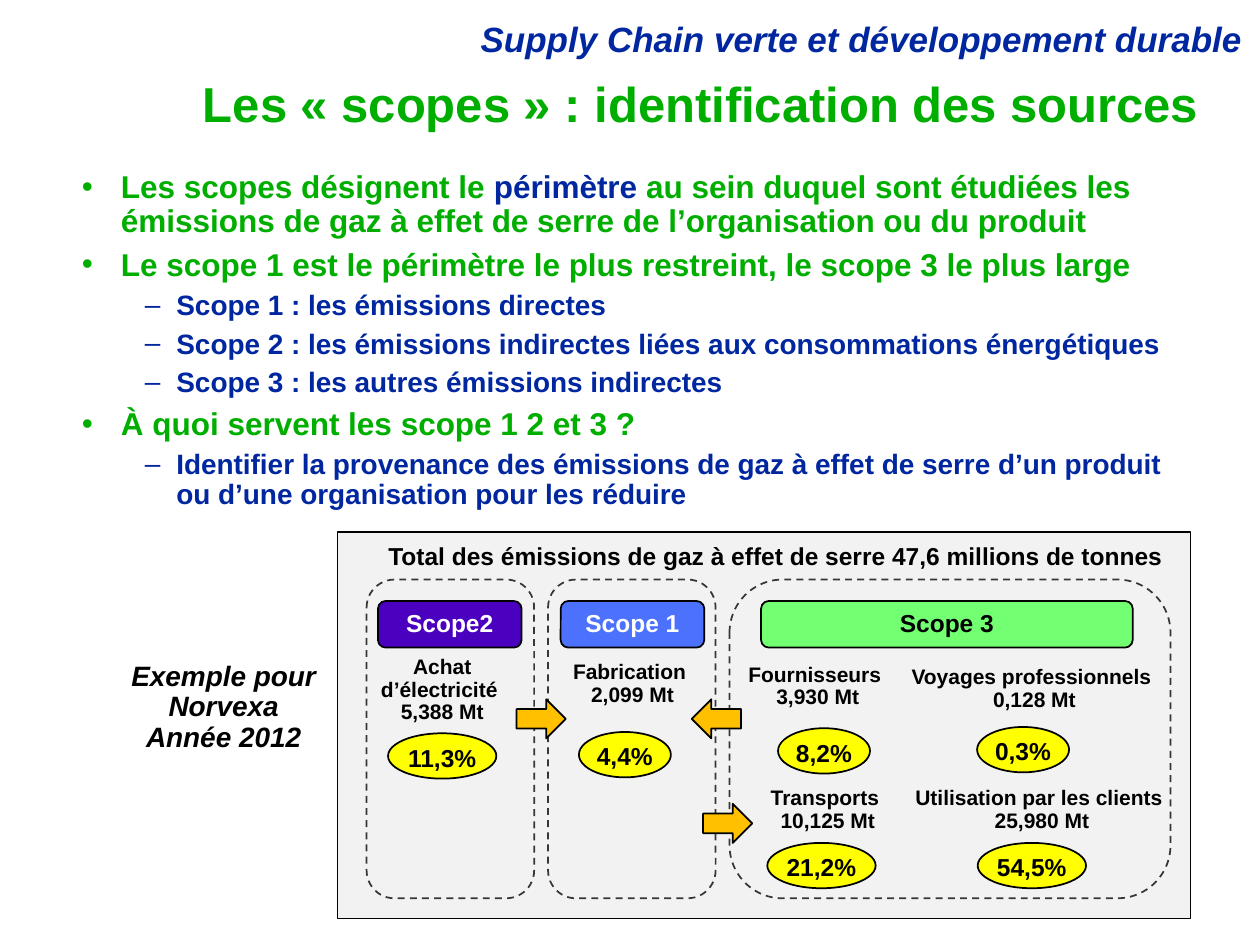
import pptx
import pptx.util
import pptx.dml.color
import pptx.enum.dml
import pptx.enum.shapes
import pptx.enum.text
import pptx.oxml
from pptx.util import Inches

SHAPE = pptx.enum.shapes.MSO_SHAPE
ALIGN = pptx.enum.text.PP_ALIGN
ANCHOR = pptx.enum.text.MSO_ANCHOR
GREEN, BLUE, BLACK, WHITE = "00AE00", "00279F", "000000", "FFFFFF"
A_NS = 'xmlns:a="http://schemas.openxmlformats.org/drawingml/2006/main"'


def rgb(color):
    return pptx.dml.color.RGBColor.from_string(color)


def write(p, text, size=14, color=BLACK, italic=False, align=ALIGN.CENTER):
    """Append bold text to a paragraph; a newline becomes a line break."""
    p.alignment = align
    p.line_spacing = 0.9
    for i, line in enumerate(text.split("\n")):
        if i:
            p.add_line_break()
        r = p.add_run()
        r.text = line
        r.font.name = "Arial"
        r.font.size = pptx.util.Pt(size)
        r.font.bold = True
        r.font.italic = italic
        r.font.color.rgb = rgb(color)


def set_frame(tf, wrap=True, inset=(0.1, 0.05), anchor=ANCHOR.TOP):
    tf.auto_size = pptx.enum.text.MSO_AUTO_SIZE.NONE
    tf.word_wrap = wrap
    tf.vertical_anchor = anchor
    tf.margin_left = tf.margin_right = Inches(inset[0])
    tf.margin_top = tf.margin_bottom = Inches(inset[1])


def place(sp, x, y, w, h):
    sp.left, sp.top, sp.width, sp.height = map(Inches, (x, y, w, h))


def add_text(shapes, box, text, wrap=True, inset=(0.1, 0.05), **fmt):
    sp = shapes.add_textbox(*map(Inches, box))
    set_frame(sp.text_frame, wrap, inset)
    write(sp.text_frame.paragraphs[0], text, **fmt)


def add_block(shapes, kind, box, fill=None, line=BLACK, dashed=False):
    sp = shapes.add_shape(kind, *map(Inches, box))
    sp.shadow.inherit = False
    if fill:
        sp.fill.solid()
        sp.fill.fore_color.rgb = rgb(fill)
    else:
        sp.fill.background()
    sp.line.color.rgb = rgb(line)
    sp.line.width = pptx.util.Pt(1)
    if dashed:
        sp.line.dash_style = pptx.enum.dml.MSO_LINE.DASH
    return sp


def add_headings(s):
    add_text(s.shapes, (1.88, 0.13, 8.08, 0.4),
             "Supply Chain verte et développement durable",
             size=20, color=BLUE, italic=True, align=ALIGN.RIGHT)
    title = s.shapes.title
    place(title, 0.98, 0.6, 8.63, 0.5)
    set_frame(title.text_frame, anchor=ANCHOR.MIDDLE)
    write(title.text_frame.paragraphs[0],
          "Les «\u00a0scopes\u00a0» : identification des sources",
          size=28, color=GREEN, align=ALIGN.RIGHT)


LEVELS = [  # size, colour, left margin, indent, bullet
    (18, GREEN, 0.31, -0.31, "•"),
    (16, BLUE, 0.75, -0.25, "–"),
]
BULLETS = [  # level, then runs as text or (text, colour)
    (0, "Les scopes désignent le ", ("périmètre", BLUE),
     " au sein duquel sont étudiées les émissions de gaz à effet de serre "
     "de l’organisation ou du produit"),
    (0, "Le scope 1 est le périmètre le plus restreint, le scope 3 le plus large"),
    (1, "Scope 1 : les émissions directes"),
    (1, "Scope 2 : les émissions indirectes liées aux consommations énergétiques"),
    (1, "Scope 3 : les autres émissions indirectes"),
    (0, "À quoi servent les scope 1 2 et 3 ?"),
    (1, "Identifier la provenance des émissions de gaz à effet de serre "
        "d’un produit ou d’une organisation pour les réduire"),
]


def add_bullets(body, box):
    place(body, *box)
    tf = body.text_frame
    set_frame(tf)
    for i, (level, *runs) in enumerate(BULLETS):
        size, color, margin, indent, char = LEVELS[level]
        p = tf.add_paragraph() if i else tf.paragraphs[0]
        p.level = level
        p.space_before = pptx.util.Pt(round(0.3 * size, 1))
        for run in runs:
            text, run_color = (run, color) if isinstance(run, str) else run
            write(p, text, size=size, color=run_color, align=ALIGN.LEFT)
        pPr = p._p.get_or_add_pPr()
        pPr.set("marL", str(Inches(margin)))
        pPr.set("indent", str(Inches(indent)))
        pPr.append(pptx.oxml.parse_xml(f'<a:buChar {A_NS} char="{char}"/>'))


# Offsets are from the scope's corner. Each source: label, its centre, top and
# width, then share, its centre and top.
SCOPES = [
    dict(x=0.23, w=1.33, name="Scope2", fill="4C00BF", color=WHITE,
         pill=(0.09, 1.14), sources=[
             ("Achat d’électricité \n5,388 Mt", 0.6, 0.61, 1.21, "11,3%", 0.6, 1.22)]),
    dict(x=1.67, w=1.33, name="Scope 1", fill="4B71FD", color=WHITE,
         pill=(0.1, 1.14), sources=[
             ("Fabrication \n2,099 Mt", 0.67, 0.65, 0.96, "4,4%", 0.61, 1.21)]),
    dict(x=3.11, w=3.5, name="Scope 3", fill="72FF72", color=BLACK,
         pill=(0.25, 2.95), sources=[
             ("Fournisseurs \n3,930 Mt", 0.7, 0.67, 1.09, "8,2%", 0.75, 1.18),
             ("Transports \n10,125 Mt", 0.78, 1.65, 0.93, "21,2%", 0.73, 2.09),
             ("Voyages professionnels \n0,128 Mt", 2.42, 0.69, 1.82, "0,3%", 2.33, 1.17),
             ("Utilisation par les clients \n25,980 Mt", 2.48, 1.65, 1.87, "54,5%", 2.4, 2.09)]),
]


def add_scope(shapes, x, y, w, h, name, fill, color, pill, sources):
    add_block(shapes, SHAPE.ROUNDED_RECTANGLE, (x, y, w, h),
              line="363636", dashed=True)
    pill_x, pill_w = pill
    sp = add_block(shapes, SHAPE.ROUNDED_RECTANGLE,
                   (x + pill_x, y + 0.17, pill_w, 0.37), fill)
    set_frame(sp.text_frame, anchor=ANCHOR.MIDDLE)
    write(sp.text_frame.paragraphs[0], name, color=color)
    for label, label_x, label_y, label_w, share, share_x, share_y in sources:
        wraps = label.startswith("Achat")
        add_text(shapes, (x + label_x - label_w / 2, y + label_y, label_w,
                          0.54 if wraps else 0.38),
                 label, wrap=wraps, inset=(0, 0), size=12)
        oval_w = 0.73 if len(share) < 5 else 0.86
        sp = add_block(shapes, SHAPE.OVAL,
                       (x + share_x - oval_w / 2, y + share_y, oval_w, 0.36), "FFFF00")
        set_frame(sp.text_frame, wrap=False)
        write(sp.text_frame.paragraphs[0], share)


def add_emissions(s, x, y, w, h):
    shapes = s.shapes.add_group_shape().shapes
    add_block(shapes, SHAPE.RECTANGLE, (x, y, w, h), "F2F2F2")
    add_text(shapes, (x + 0.57, y + 0.1, 5.87, 0.23),
             "Total des émissions de gaz à effet de serre 47,6 millions de tonnes ",
             wrap=False, inset=(0, 0))
    for scope in SCOPES:
        add_scope(shapes, y=y + 0.38, h=h - 0.54, **{**scope, "x": x + scope["x"]})
    for kind, dx, dy in [(SHAPE.RIGHT_ARROW, 1.42, 1.33),
                         (SHAPE.RIGHT_ARROW, 2.9, 2.16),
                         (SHAPE.LEFT_ARROW, 2.81, 1.33)]:
        add_block(shapes, kind, (x + dx, y + dy, 0.39, 0.31), "FFC000")


def main():
    prs = pptx.Presentation()
    prs.slide_width, prs.slide_height = Inches(10), Inches(7.5)
    s = prs.slides.add_slide(prs.slide_layouts[1])
    add_headings(s)
    add_bullets(s.placeholders[1], (0.55, 1.31, 8.9, 3.46))
    add_text(s.shapes, (0.55, 5.21, 2.45, 0.83),
             "Exemple pour\nNorvexa\nAnnée 2012", size=16, italic=True)
    add_emissions(s, 2.68, 4.22, 6.77, 3.07)
    prs.save("out.pptx")


if __name__ == "__main__":
    main()
